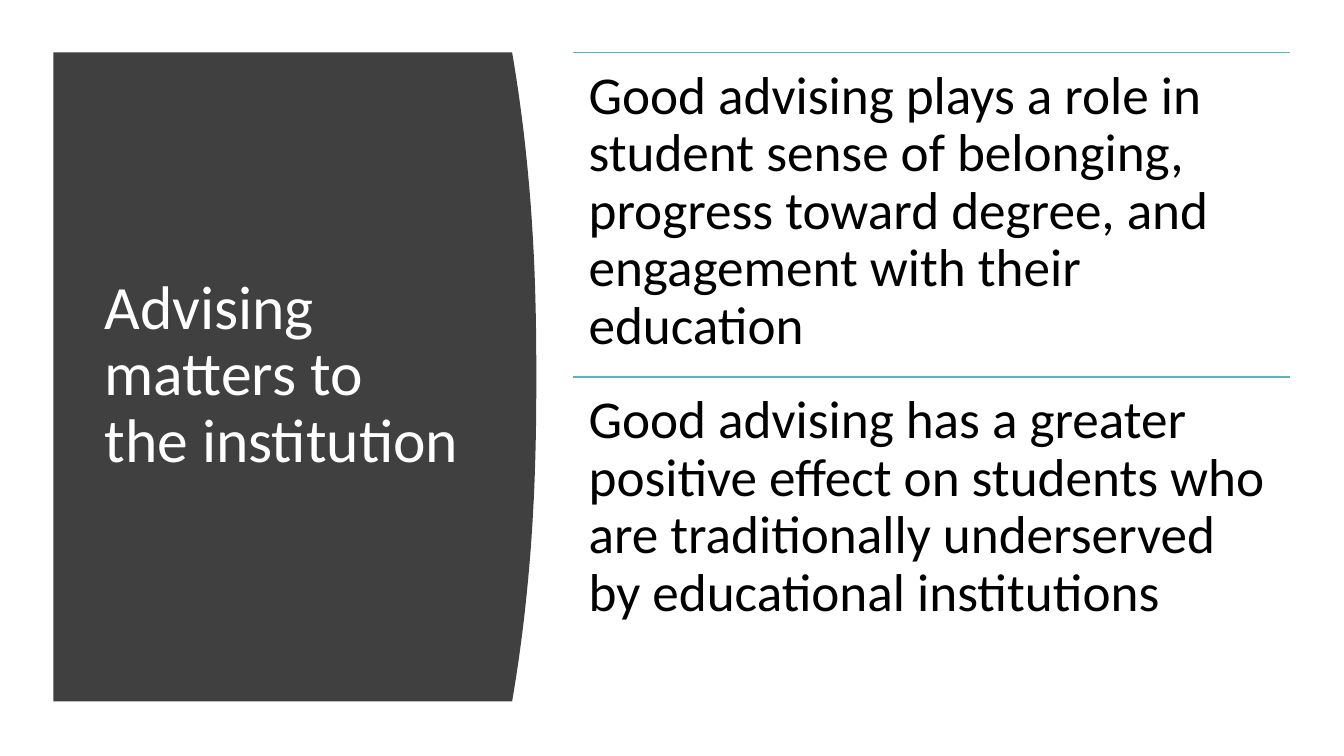
"""Build the slide on why advising matters to the institution."""
from dataclasses import dataclass

from lxml.etree import SubElement
from pptx import Presentation
from pptx.dml.color import RGBColor
from pptx.enum.shapes import MSO_CONNECTOR as Connector
from pptx.enum.text import MSO_ANCHOR as Anchor
from pptx.oxml.ns import qn
from pptx.slide import Slide
from pptx.util import Pt

PANEL_LEFT, PANEL_TOP, PANEL_HEIGHT = 38.2, 37.4, 463.7
PANEL_CORNER, PANEL_BULGE, CURVE_STEPS = 365.8, 17.3, 48
POINT_LEFT, POINT_WIDTH = 409, 512.6


@dataclass(frozen=True)
class Box:
    """Position and size in points."""
    left: float
    top: float
    width: float
    height: float


@dataclass(frozen=True)
class KeyPoint:
    """One statement beneath a rule."""
    statement: str
    box: Box


STATEMENTS = [
    "Good advising plays a role in student sense of belonging, progress toward degree, "
    "and engagement with their education",
    "Good advising has a greater positive effect on students who are traditionally "
    "underserved by educational institutions",
]


def color(value: str) -> RGBColor:
    """Return the colour for a hex string."""
    return RGBColor.from_string(value)


def add_text(slide: Slide, text: str, box: Box, *, size: float, ink: str,
             anchor: Anchor = Anchor.TOP, inset_x: float = 7.2,
             inset_y: float = 3.6) -> None:
    """Add one wrapped paragraph in the given format."""
    frame = slide.shapes.add_textbox(
        Pt(box.left), Pt(box.top), Pt(box.width), Pt(box.height)).text_frame
    frame.word_wrap = True
    frame.vertical_anchor = anchor
    frame.margin_left = frame.margin_right = Pt(inset_x)
    frame.margin_top = frame.margin_bottom = Pt(inset_y)
    paragraph = frame.paragraphs[0]
    paragraph.text = text
    paragraph.line_spacing = 0.9
    for run in paragraph.runs:
        run.font.name = "Calibri"
        run.font.size = Pt(size)
        run.font.color.rgb = color(ink)


def add_panel(slide: Slide) -> None:
    """Draw the dark panel with its bulging right edge."""
    edge = []
    for step in range(CURVE_STEPS + 1):
        fraction = step / CURVE_STEPS
        bulge = PANEL_BULGE * (1 - abs(2 * fraction - 1) ** 2.3)
        edge.append((Pt(PANEL_CORNER + bulge), Pt(PANEL_TOP + PANEL_HEIGHT * fraction)))
    outline = slide.shapes.build_freeform(Pt(PANEL_LEFT), Pt(PANEL_TOP))
    outline.add_line_segments(edge + [(Pt(PANEL_LEFT), Pt(PANEL_TOP + PANEL_HEIGHT))])
    panel = outline.convert_to_shape()
    panel.shadow.inherit = False
    panel.fill.solid()
    panel.fill.fore_color.rgb = color("404040")
    panel.line.fill.background()


def add_key_point(slide: Slide, point: KeyPoint) -> None:
    """Draw a rule and the statement beneath it."""
    box = point.box
    rule = slide.shapes.add_connector(
        Connector.STRAIGHT, Pt(box.left), Pt(box.top), Pt(box.left + box.width), Pt(box.top))
    rule.line.color.rgb = color("58B6C0")
    rule.line.width = Pt(1)
    SubElement(rule._element.spPr, qn("a:effectLst"))
    add_text(slide, point.statement, box, size=38, ink="000000", inset_x=11.4, inset_y=11.4)


def main() -> None:
    """Build and save the deck."""
    deck = Presentation()
    deck.slide_width, deck.slide_height = Pt(960), Pt(540)
    slide = deck.slides.add_slide(deck.slide_layouts[6])
    add_panel(slide)
    add_text(slide, "Advising matters to \vthe institution", Box(67.7, 79.9, 269.3, 377.3),
             size=44, ink="FFFFFF", anchor=Anchor.MIDDLE)
    pitch = PANEL_HEIGHT / len(STATEMENTS)
    for index, statement in enumerate(STATEMENTS):
        box = Box(POINT_LEFT, PANEL_TOP + index * pitch, POINT_WIDTH, pitch)
        add_key_point(slide, KeyPoint(statement, box))
    deck.save("out.pptx")


if __name__ == "__main__":
    main()
